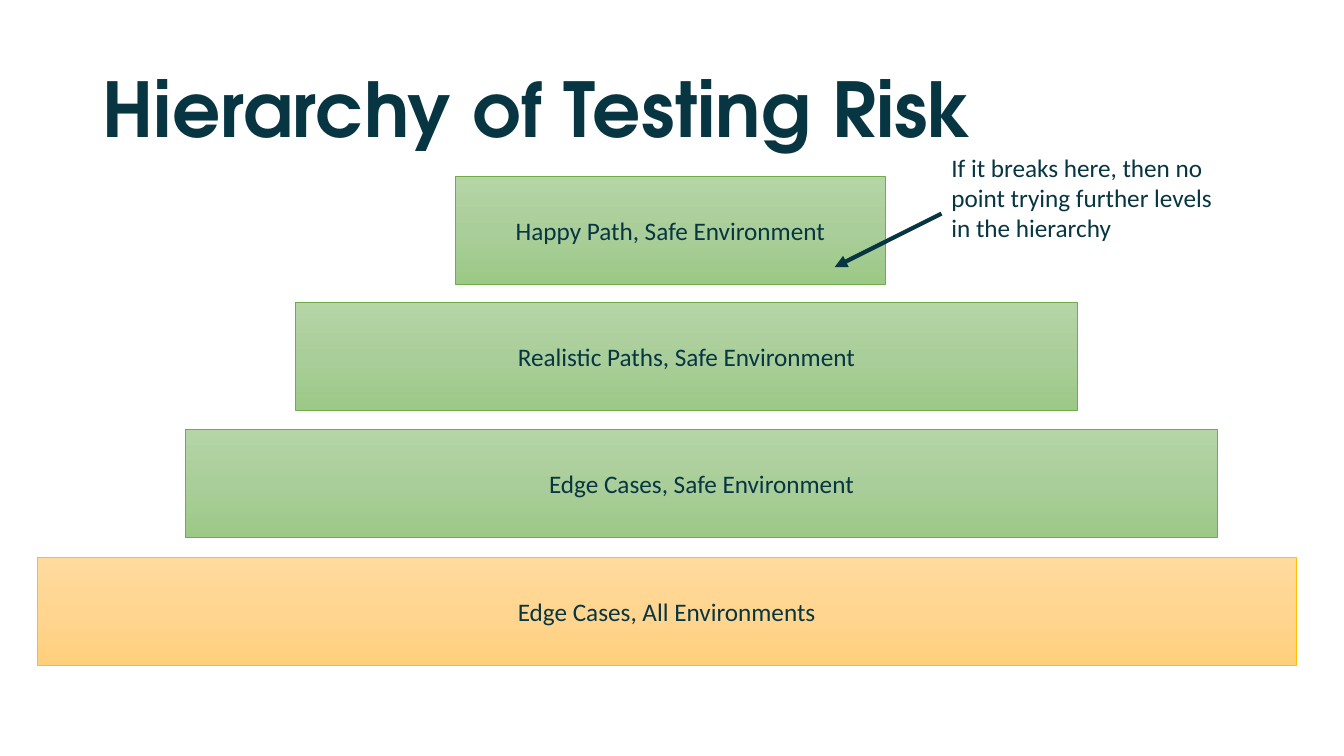
from copy import deepcopy

from lxml import etree
from pptx import Presentation
from pptx.dml.color import RGBColor
from pptx.enum import shapes, text
from pptx.oxml import ns
from pptx.util import Pt

COLORS = {"ink": "073642", "green_line": "70AD47", "amber_line": "FFC000"}
GRADIENTS = {
    "green": ("B5D5A7", "AACE9A", "9CC987"),
    "amber": ("FFDB9E", "FFD590", "FFD07C"),
}
TIERS = [
    ("Happy Path, Safe Environment", 325.5, 126, 306.7, "green"),
    ("Realistic Paths, Safe Environment", 211, 216, 558.7, "green"),
    ("Edge Cases, Safe Environment", 132.5, 306.7, 737.3, "green"),
    ("Edge Cases, All Environments", 26.6, 398.2, 899.3, "amber"),
]
TIER_HEIGHT = 77


def rgb(name):
    """Return the named colour."""
    return RGBColor.from_string(COLORS[name])


def write(frame, words, size=18, font="Calibri", bold=False,
          align=text.PP_ALIGN.LEFT, anchor=text.MSO_ANCHOR.TOP, spacing=1.0):
    """Put formatted text into a text frame."""
    frame.word_wrap = True
    frame.vertical_anchor = anchor
    paragraph = frame.paragraphs[0]
    paragraph.alignment = align
    paragraph.line_spacing = spacing
    run = paragraph.add_run()
    run.text = words
    run.font.size = Pt(size)
    run.font.name = font
    run.font.bold = bold
    run.font.color.rgb = rgb("ink")


def shade(tier, gradient):
    """Fill a tier from top to bottom with three gradient stops."""
    tier.fill.gradient()
    tier.fill.gradient_angle = 270
    stops = tier.element.spPr.find(".//" + ns.qn("a:gsLst"))
    stops.insert(1, deepcopy(stops[0]))
    for index, (stop, shade_hex) in enumerate(zip(tier.fill.gradient_stops, gradient)):
        stop.position = index / 2
        stop.color.rgb = RGBColor.from_string(shade_hex)


def add_title(slide, left, top, width, height):
    """Place the slide heading."""
    heading = slide.shapes.title
    heading.left, heading.top = Pt(left), Pt(top)
    heading.width, heading.height = Pt(width), Pt(height)
    write(heading.text_frame, "Hierarchy of Testing Risk", size=54,
          font="TeX Gyre Adventor", bold=True,
          anchor=text.MSO_ANCHOR.MIDDLE, spacing=0.9)


def add_tier(slide, label, left, top, width, height, tone):
    """Draw one level of the hierarchy."""
    tier = slide.shapes.add_shape(shapes.MSO_SHAPE.RECTANGLE,
                                  Pt(left), Pt(top), Pt(width), Pt(height))
    tier.shadow.inherit = False
    shade(tier, GRADIENTS[tone])
    tier.line.color.rgb = rgb(f"{tone}_line")
    tier.line.width = Pt(0.5)
    write(tier.text_frame, label, align=text.PP_ALIGN.CENTER,
          anchor=text.MSO_ANCHOR.MIDDLE)


def add_callout(slide, left, top, width, height):
    """Place the remark and its arrow to the top tier."""
    remark = slide.shapes.add_textbox(Pt(left), Pt(top), Pt(width), Pt(height))
    write(remark.text_frame,
          "If it breaks here, then no point trying further levels in the hierarchy")
    remark.text_frame.auto_size = text.MSO_AUTO_SIZE.SHAPE_TO_FIT_TEXT
    arrow = slide.shapes.add_connector(
        shapes.MSO_CONNECTOR.STRAIGHT,
        Pt(left), Pt(top + 47.5), Pt(left - 76.3), Pt(top + 85.7))
    arrow.line.color.rgb = rgb("ink")
    arrow.line.width = Pt(3)
    etree.SubElement(arrow.line._get_or_add_ln(), ns.qn("a:tailEnd"), type="triangle")
    etree.SubElement(arrow.element.spPr, ns.qn("a:effectLst"))


def main():
    """Build and save the slide."""
    deck = Presentation()
    deck.slide_width, deck.slide_height = Pt(960), Pt(540)
    slide = deck.slides.add_slide(deck.slide_layouts[5])
    add_title(slide, 66, 28.8, 828, 104.4)
    for label, left, top, width, tone in TIERS:
        add_tier(slide, label, left, top, width, TIER_HEIGHT, tone)
    add_callout(slide, 672.5, 105.1, 211, 72.7)
    deck.save("out.pptx")


if __name__ == "__main__":
    main()
